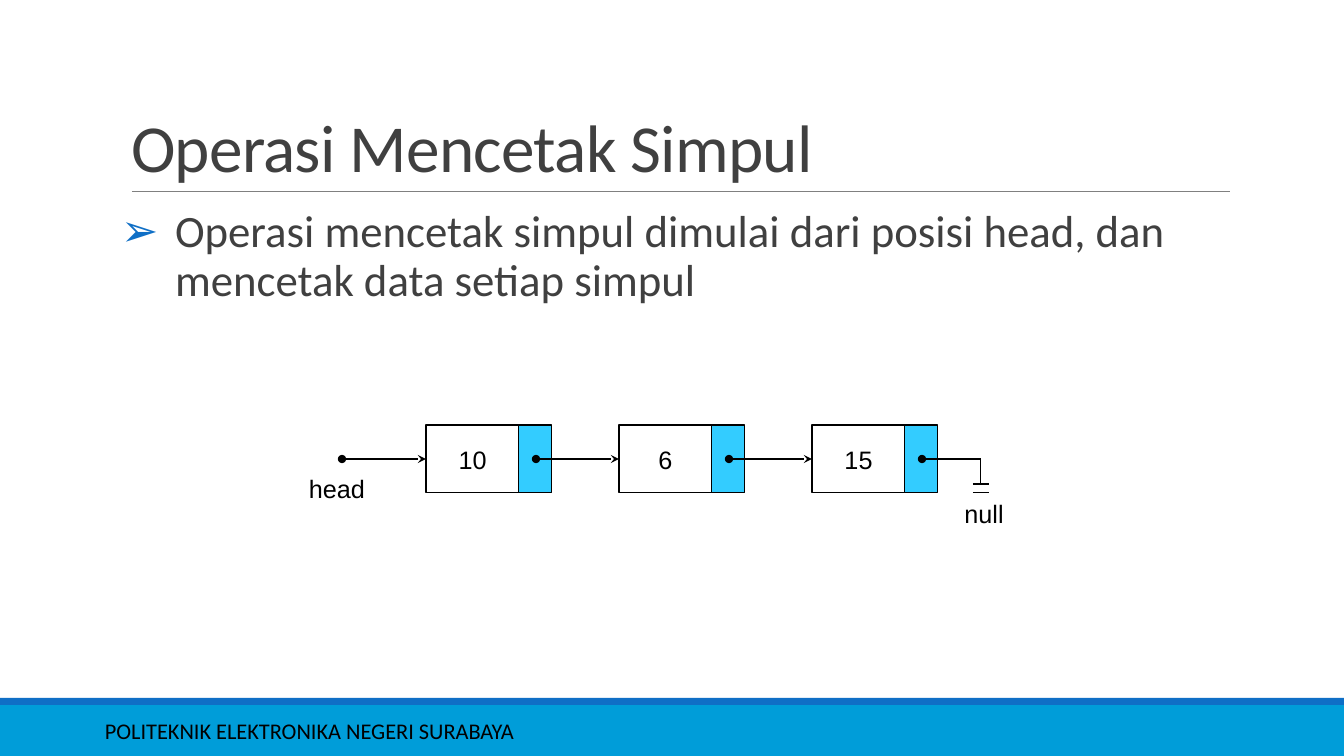
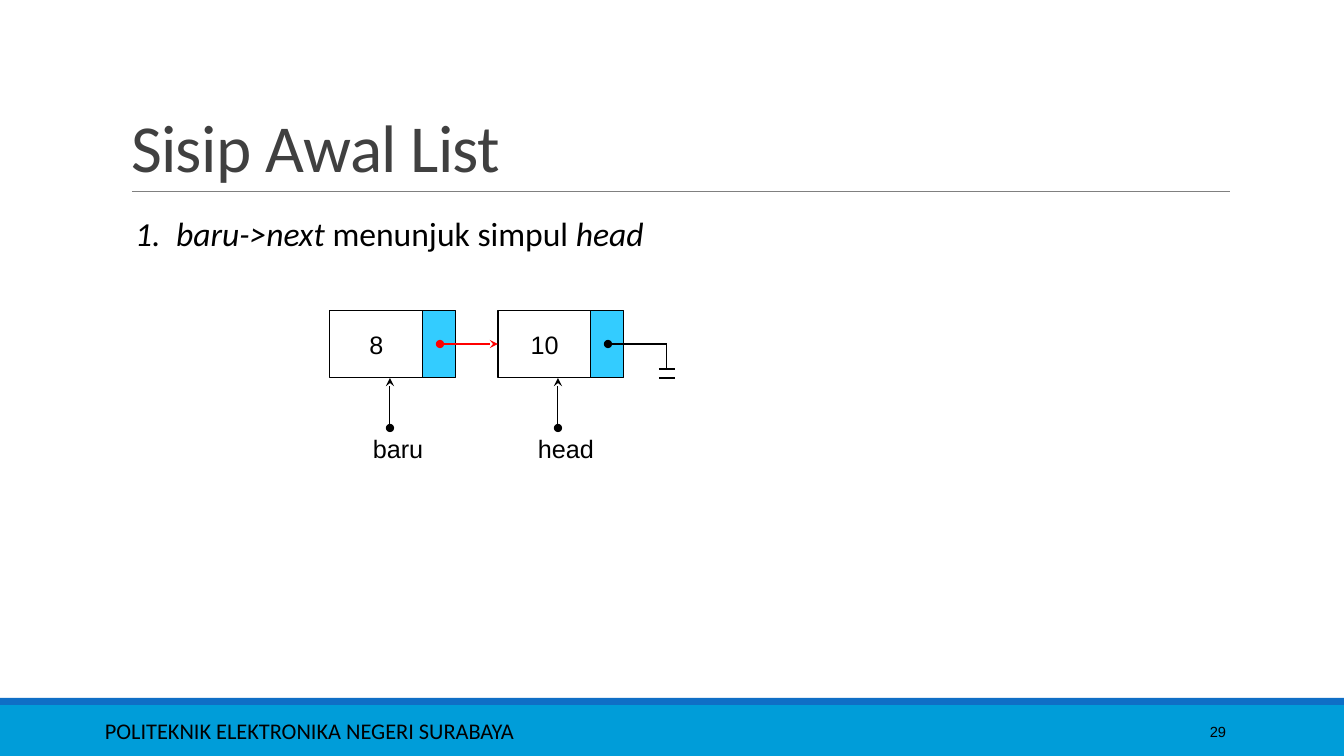
from lxml import etree
from pptx import Presentation
from pptx import util as u
from pptx.dml.color import RGBColor
from pptx.enum import shapes, text
from pptx.oxml import ns

BLACK = RGBColor(0x00, 0x00, 0x00)
DARK_GREY = RGBColor(0x40, 0x40, 0x40)
RULE_GREY = RGBColor(0x80, 0x80, 0x80)
BLUE = RGBColor(0x0F, 0x6F, 0xC6)
CYAN = RGBColor(0x00, 0x9D, 0xD9)
POINTER_BLUE = RGBColor(0x33, 0xCC, 0xFF)
RED = RGBColor(0xFF, 0x00, 0x00)

FOOTER = "POLITEKNIK ELEKTRONIKA NEGERI SURABAYA"
FOOTER_FONT = {"name": "Calibri", "size": u.Pt(16), "color": BLACK}
NUMBER_FONT = {"name": "Arial", "size": u.Pt(10.5), "color": BLACK}
TITLE_FONT = {"name": "Calibri", "size": u.Pt(48), "color": DARK_GREY}
DIAGRAM_FONT = {"name": "Arial", "size": u.Pt(18), "color": BLACK}

SLIDES = [
    {
        "title": "Operasi Mencetak Simpul",
        "body": {
            "box": (121, 204, 1109, 444),
            "side_inset": 0,
            "hanging": 54,
            "line_spacing": 0.9,
            "bullet": ("buChar", "char", "➢", BLUE),
            "font": {"name": "Calibri", "size": u.Pt(32), "color": DARK_GREY},
            "runs": [("Operasi mencetak simpul dimulai dari posisi head, "
                      "dan mencetak data setiap simpul", False)],
        },
        "chain": {"left": 426, "top": 425, "pitch": 193,
                  "values": ["10", "6", "15"], "link_color": BLACK},
        "side_pointer": True,
        "labels": [("head", 278, 468), ("null", 925, 493)],
    },
    {
        "title": "Sisip Awal List",
        "number": "29",
        "body": {
            "box": (125, 208, 740, 50),
            "side_inset": 10,
            "hanging": 41,
            "line_spacing": 1.0,
            "bullet": ("buAutoNum", "type", "arabicPeriod", BLACK),
            "font": {"name": "Calibri", "size": u.Pt(24), "color": BLACK},
            "runs": [("baru->next ", True), ("menunjuk simpul ", False),
                     ("head", True)],
        },
        "chain": {"left": 330, "top": 310, "pitch": 168,
                  "values": ["8", "10"], "link_color": RED},
        "up_pointers": True,
        "labels": [("baru", 339, 428), ("head", 507, 428)],
    },
]

SCALE = 914400 / 100.8
DATA_WIDTH, POINTER_WIDTH, NODE_HEIGHT = 93, 33, 68
DOT_OFFSET = 110
MIDDLE = NODE_HEIGHT // 2


def px(length):
    return u.Emu(round(length * SCALE))


def box_emu(box):
    return [px(length) for length in box]


def add_run(paragraph, words, font, italic=False):
    run = paragraph.add_run()
    run.text = words
    run.font.italic = italic
    for name, value in font.items():
        if name == "color":
            run.font.color.rgb = value
        else:
            setattr(run.font, name, value)
    return run


def add_label(slide, words, box, font, align=text.PP_ALIGN.LEFT,
              anchor=text.MSO_ANCHOR.MIDDLE):
    label = slide.shapes.add_textbox(*box_emu(box))
    frame = label.text_frame
    frame.word_wrap = True
    frame.vertical_anchor = anchor
    frame.paragraphs[0].alignment = align
    add_run(frame.paragraphs[0], words, font)
    return label


def add_rectangle(slide, box, fill=None, line=None):
    shape = slide.shapes.add_shape(shapes.MSO_SHAPE.RECTANGLE, *box_emu(box))
    shape.shadow.inherit = False
    if fill is None:
        shape.fill.background()
    else:
        shape.fill.solid()
        shape.fill.fore_color.rgb = fill
    if line is None:
        shape.line.fill.background()
    else:
        shape.line.color.rgb = line
        shape.line.width = u.Pt(0.75)
    return shape


def add_line(slide, start, end, color=BLACK, width=0.75, **ends):
    """Draw a straight line; ends may give headEnd and tailEnd, in that order."""
    line = slide.shapes.add_connector(shapes.MSO_CONNECTOR.STRAIGHT,
                                      *box_emu(start + end))
    line.line.color.rgb = color
    line.line.width = u.Pt(width)
    properties = line.element.spPr
    for tag, kind in ends.items():
        etree.SubElement(properties.get_or_add_ln(), ns.qn("a:" + tag), type=kind)
    etree.SubElement(properties, ns.qn("a:effectLst"))
    return line


def add_arrow(slide, start, end, color=BLACK):
    return add_line(slide, start, end, color, headEnd="oval", tailEnd="stealth")


def move_decor_to_layout(slide, layout):
    """Draw the bands, rule and footer once and store them in the layout."""
    decor = [
        add_rectangle(slide, (0, 705, 1344, 51), CYAN),
        add_rectangle(slide, (0, 698, 1344, 7), BLUE),
        add_line(slide, (132, 191), (1230, 191), RULE_GREY, 0.5),
        add_label(slide, FOOTER, (95, 711, 848, 40), FOOTER_FONT),
    ]
    for shape in decor:
        layout.shapes.element.append(shape.element)


def place(placeholder, box):
    placeholder.left, placeholder.top, placeholder.width, placeholder.height = box_emu(box)
    frame = placeholder.text_frame
    frame.auto_size = text.MSO_AUTO_SIZE.NONE
    frame.word_wrap = True
    paragraph = frame.paragraphs[0]
    paragraph.alignment = text.PP_ALIGN.LEFT
    paragraph.space_before = u.Pt(0)
    return frame, paragraph


def fill_title(slide, words):
    frame, paragraph = place(slide.shapes.title, (121, 31, 1109, 160))
    frame.vertical_anchor = text.MSO_ANCHOR.BOTTOM
    paragraph.line_spacing = 0.85
    run = add_run(paragraph, words, TITLE_FONT)
    run.font.element.set("spc", "-50") if hasattr(run.font, "element") else \
        run._r.get_or_add_rPr().set("spc", "-50")


def fill_body(slide, body):
    frame, paragraph = place(slide.placeholders[1], body["box"])
    frame.vertical_anchor = text.MSO_ANCHOR.TOP
    frame.margin_left = frame.margin_right = px(body["side_inset"])
    paragraph.line_spacing = body["line_spacing"]
    tag, attribute, value, color = body["bullet"]
    properties = paragraph._p.get_or_add_pPr()
    properties.set("marL", str(px(body["hanging"])))
    properties.set("indent", str(-px(body["hanging"])))
    bullet_color = etree.SubElement(properties, ns.qn("a:buClr"))
    etree.SubElement(bullet_color, ns.qn("a:srgbClr"), val=str(color))
    etree.SubElement(properties, ns.qn("a:" + tag), {attribute: value})
    for words, italic in body["runs"]:
        add_run(paragraph, words, body["font"], italic)


def add_node(slide, value, left, top):
    data = add_rectangle(slide, (left, top, DATA_WIDTH, NODE_HEIGHT), line=BLACK)
    paragraph = data.text_frame.paragraphs[0]
    paragraph.alignment = text.PP_ALIGN.CENTER
    add_run(paragraph, value, DIAGRAM_FONT)
    add_rectangle(slide, (left + DATA_WIDTH, top, POINTER_WIDTH, NODE_HEIGHT),
                  POINTER_BLUE, BLACK)
    return data


def add_null_end(slide, left, top):
    """Draw the bent line and two bars that close a list."""
    x, middle = left + 169, top + MIDDLE
    add_line(slide, (left + DOT_OFFSET, middle), (x, middle), headEnd="oval")
    add_line(slide, (x, middle), (x, top + 59))
    for y in (top + 59, top + NODE_HEIGHT):
        add_line(slide, (x - 8, y), (x + 8, y))


def add_chain(slide, content):
    chain = content["chain"]
    top, middle = chain["top"], chain["top"] + MIDDLE
    lefts = [chain["left"] + i * chain["pitch"] for i in range(len(chain["values"]))]
    nodes = [add_node(slide, value, left, top)
             for value, left in zip(chain["values"], lefts)]
    for left, target_left, target in zip(lefts, lefts[1:], nodes[1:]):
        link = add_arrow(slide, (left + DOT_OFFSET, middle), (target_left, middle),
                         chain["link_color"])
        link.end_connect(target, 1)
    add_null_end(slide, lefts[-1], top)
    if content.get("side_pointer"):
        pointer = add_arrow(slide, (lefts[0] - 84, middle), (lefts[0], middle))
        pointer.end_connect(nodes[0], 1)
    if content.get("up_pointers"):
        for left in lefts:
            add_arrow(slide, (left + 60, top + 118), (left + 60, top + NODE_HEIGHT))
    for words, left, label_top in content["labels"]:
        add_label(slide, words, (left, label_top, 118, 40), DIAGRAM_FONT,
                  text.PP_ALIGN.CENTER, text.MSO_ANCHOR.TOP)


def main():
    presentation = Presentation()
    presentation.slide_width, presentation.slide_height = px(1344), px(756)
    layout = presentation.slide_layouts[1]
    for index, content in enumerate(SLIDES):
        slide = presentation.slides.add_slide(layout)
        if index == 0:
            move_decor_to_layout(slide, layout)
        fill_title(slide, content["title"])
        fill_body(slide, content["body"])
        add_chain(slide, content)
        if "number" in content:
            add_label(slide, content["number"], (1092, 712, 144, 40), NUMBER_FONT,
                      text.PP_ALIGN.RIGHT)
    presentation.save("out.pptx")


if __name__ == "__main__":
    main()
